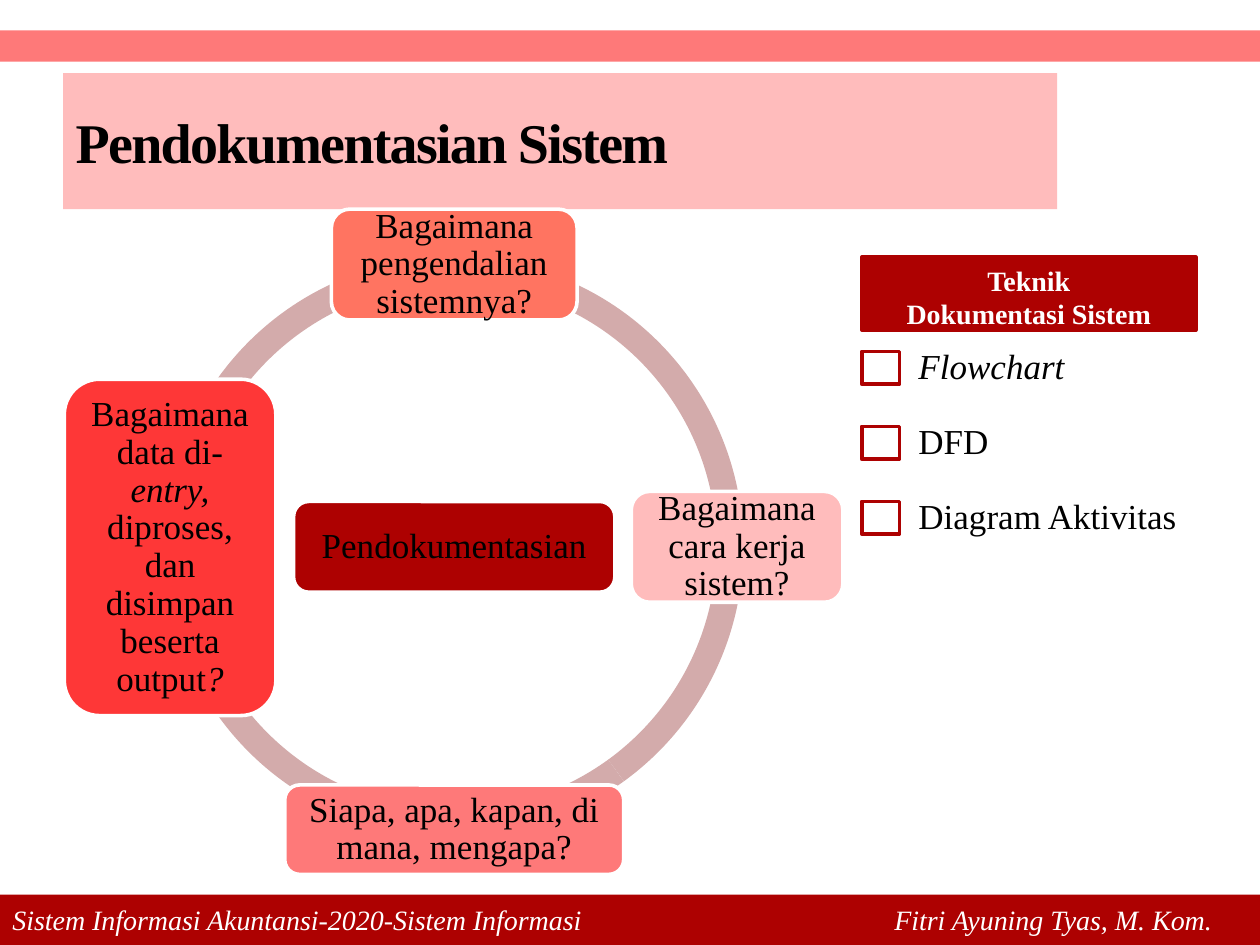
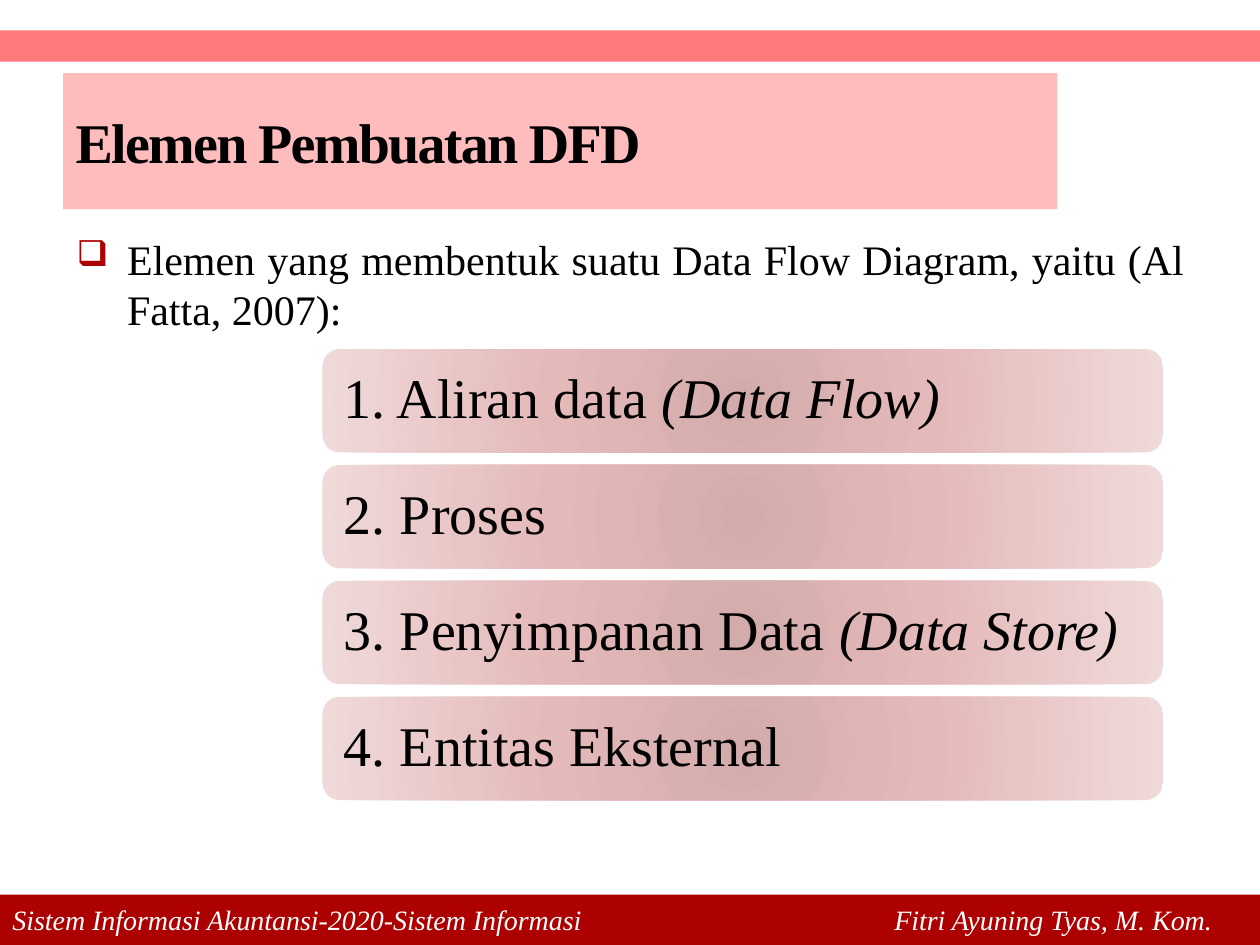
"""Build two slides on system documentation and the elements of a data flow diagram."""
from lxml import etree
from pptx import Presentation
from pptx.dml.color import RGBColor
from pptx.enum.shapes import MSO_SHAPE
from pptx.enum.text import MSO_ANCHOR, MSO_AUTO_SIZE, PP_ALIGN
from pptx.oxml import parse_xml
from pptx.oxml.ns import nsdecls, qn
from pptx.util import Inches, Pt

RECT, ROUNDED, ARC = MSO_SHAPE.RECTANGLE, MSO_SHAPE.ROUNDED_RECTANGLE, MSO_SHAPE.BLOCK_ARC
TOP, MIDDLE = MSO_ANCHOR.TOP, MSO_ANCHOR.MIDDLE
LEFT, CENTER, JUSTIFY = PP_ALIGN.LEFT, PP_ALIGN.CENTER, PP_ALIGN.JUSTIFY
NO_AUTOFIT = MSO_AUTO_SIZE.NONE

FONT = "Times New Roman"
BLACK = RGBColor(0x00, 0x00, 0x00)
WHITE = RGBColor(0xFF, 0xFF, 0xFF)
DARK_RED = RGBColor(0xAD, 0x01, 0x01)
RED = RGBColor(0xFE, 0x37, 0x37)
CORAL = RGBColor(0xFF, 0x74, 0x61)
ROSE = RGBColor(0xFE, 0x79, 0x79)
PINK = RGBColor(0xFF, 0xBC, 0xBC)
DUSTY = RGBColor(0xD3, 0xAB, 0xAB)
GLOW = [(0, DUSTY), (45, RGBColor(0xE4, 0xB9, 0xB9)), (100, RGBColor(0xF0, 0xD9, 0xD9))]

# Text between bars is italic.
FOOTER = "|Sistem Informasi Akuntansi-2020-Sistem Informasi\tFitri Ayuning Tyas, M. Kom."
DOCUMENTATION_TITLE = "Pendokumentasian Sistem"
ELEMENTS_TITLE = "Elemen Pembuatan DFD"
RING_BOX = (1.3, 2.04, 4.6, 4.6)
RING_ANGLES = [(108, 162), (54, 108), (0, 54), (162, 0)]
QUESTIONS = [
    ("Pendokumentasian", DARK_RED, (2.33, 3.98, 2.55, 0.72)),
    ("Bagaimana pengendalian sistemnya?", CORAL, (2.63, 1.66, 1.95, 0.88)),
    ("Bagaimana cara kerja sistem?", PINK, (5.01, 3.9, 1.68, 0.88)),
    ("Siapa, apa, kapan, di mana, mengapa?", ROSE, (2.26, 6.23, 2.69, 0.71)),
    ("Bagaimana data di-|entry, |diproses, dan disimpan beserta output|?", RED,
     (0.51, 3.01, 1.68, 2.67)),
]
TECHNIQUE_HEADING = ["Teknik", "Dokumentasi Sistem"]
TECHNIQUES = ["|Flowchart", "DFD", "Diagram Aktivitas"]
ELEMENTS_INTRO = "Elemen yang membentuk suatu Data Flow Diagram, yaitu (Al Fatta, 2007):"
ELEMENTS = ["1. Aliran data |(Data Flow)", "2. Proses",
            "3. Penyimpanan Data |(Data Store)", "4. Entitas Eksternal"]


def write(frame, lines, size, color=BLACK, align=LEFT, anchor=MIDDLE, margin=None,
          bold=False, spacing=None):
    """Fill a text frame, one paragraph a line, with bars switching italics."""
    frame.word_wrap = True
    frame.auto_size = NO_AUTOFIT
    frame.vertical_anchor = anchor
    if margin is not None:
        frame.margin_left = frame.margin_right = Inches(margin)
        frame.margin_top = frame.margin_bottom = Inches(margin)
    for index, line in enumerate(lines):
        paragraph = frame.add_paragraph() if index else frame.paragraphs[0]
        paragraph.alignment = align
        if spacing:
            paragraph.line_spacing = spacing
        font = paragraph.font
        font.name, font.size, font.bold = FONT, Pt(size), bold
        font.color.rgb = color
        for position, part in enumerate(line.split("|")):
            if part:
                run = paragraph.add_run()
                run.text = part
                if position % 2:
                    run.font.italic = True


def add_block(slide, kind, box, fill=None, line=None):
    """Add a flat preset shape with an optional fill and outline."""
    block = slide.shapes.add_shape(kind, *map(Inches, box))
    block.shadow.inherit = False
    if fill is not None:
        block.fill.solid()
        block.fill.fore_color.rgb = fill
    if line is None:
        block.line.fill.background()
    else:
        block.line.color.rgb = line
        block.line.width = Pt(2.08)
    return block


def add_label(slide, box, text, size, **style):
    """Add a one-paragraph text box and return its paragraph."""
    label = slide.shapes.add_textbox(*map(Inches, box))
    write(label.text_frame, [text], size, **style)
    return label.text_frame.paragraphs[0]


def add_glow(block):
    """Give a shape the radial gradient of the element rows."""
    stops = "".join(f'<a:gs pos="{percent * 1000}"><a:srgbClr val="{color}"/></a:gs>'
                    for percent, color in GLOW)
    block.element.spPr.insert(2, parse_xml(
        f'<a:gradFill {nsdecls("a")} rotWithShape="1"><a:gsLst>{stops}</a:gsLst>'
        '<a:path path="circle"><a:fillToRect l="100000" t="100000" r="100000" b="100000"/>'
        '</a:path></a:gradFill>'))


def add_bullet(paragraph):
    """Give a paragraph a hanging red box bullet."""
    properties = paragraph._p.get_or_add_pPr()
    properties.set("marL", str(Inches(0.4)))
    properties.set("indent", str(-Inches(0.4)))
    bullet = [
        f'<a:buClr {nsdecls("a")}><a:srgbClr val="{DARK_RED}"/></a:buClr>',
        f'<a:buSzPct {nsdecls("a")} val="85000"/>',
        f'<a:buChar {nsdecls("a")} char="❑"/>',
    ]
    for index, markup in enumerate(bullet):
        properties.insert(index, parse_xml(markup))


def add_bands(layout, slide):
    """Draw the top band and the footer, then hand them to the layout."""
    band = add_block(slide, RECT, (0, 0.24, 10, 0.25), ROSE)
    footer = add_block(slide, RECT, (0, 7.1, 10, 0.4), DARK_RED)
    write(footer.text_frame, [FOOTER], 16, WHITE)
    properties = footer.text_frame.paragraphs[0]._p.get_or_add_pPr()
    tabs = etree.Element(qn("a:tabLst"))
    etree.SubElement(tabs, qn("a:tab"), pos=str(Inches(7)), algn="l")
    properties.insert(0, tabs)
    for part in (band, footer):
        layout.shapes.element.append(part.element)


def add_titled_slide(deck, layout, text):
    """Add a slide with the pink title panel."""
    slide = deck.slides.add_slide(layout)
    title = slide.shapes.title
    title.left, title.top, title.width, title.height = map(Inches, (0.5, 0.58, 7.89, 1.08))
    title.fill.solid()
    title.fill.fore_color.rgb = PINK
    write(title.text_frame, [text], 32, bold=True)
    title.text_frame.paragraphs[0].runs[0]._r.get_or_add_rPr().set("spc", "-100")
    return slide


def draw_documentation(slide):
    """Draw the ring of questions and the list of techniques."""
    for start, end in RING_ANGLES:
        arc = add_block(slide, ARC, RING_BOX, DUSTY)
        for index, value in enumerate((start * 0.6, end * 0.6, 0.046)):
            arc.adjustments[index] = value
    for question, fill, box in QUESTIONS:
        node = add_block(slide, ROUNDED, box, fill, WHITE)
        write(node.text_frame, [question], 20, align=CENTER, margin=0.03, spacing=0.9)

    heading = add_block(slide, RECT, (6.84, 2.04, 2.65, 0.58), DARK_RED, DARK_RED)
    write(heading.text_frame, TECHNIQUE_HEADING, 16, WHITE, CENTER, TOP, bold=True)
    for index, technique in enumerate(TECHNIQUES):
        top = 2.62 + index * 0.595
        add_block(slide, RECT, (6.84, top + 0.17, 0.3, 0.26), WHITE, DARK_RED)
        add_label(slide, (7.13, top, 2.8, 0.6), technique, 20, margin=0.16, spacing=0.9)


def draw_elements(slide):
    """Draw the introduction and one row for each element."""
    intro = add_label(slide, (0.51, 1.8, 8.99, 0.95), ELEMENTS_INTRO, 24,
                      align=JUSTIFY, anchor=TOP)
    add_bullet(intro)
    for index, element in enumerate(ELEMENTS):
        row = add_block(slide, ROUNDED, (2.56, 2.77 + index * 0.92, 6.67, 0.82))
        add_glow(row)
        write(row.text_frame, [element], 32, margin=0.13, spacing=0.9)


def main():
    """Build and save the deck."""
    deck = Presentation()
    deck.slide_width, deck.slide_height = Inches(10), Inches(7.5)
    layout = deck.slide_layouts[5]
    documentation = add_titled_slide(deck, layout, DOCUMENTATION_TITLE)
    add_bands(layout, documentation)
    draw_documentation(documentation)
    draw_elements(add_titled_slide(deck, layout, ELEMENTS_TITLE))
    deck.save("out.pptx")


if __name__ == "__main__":
    main()
